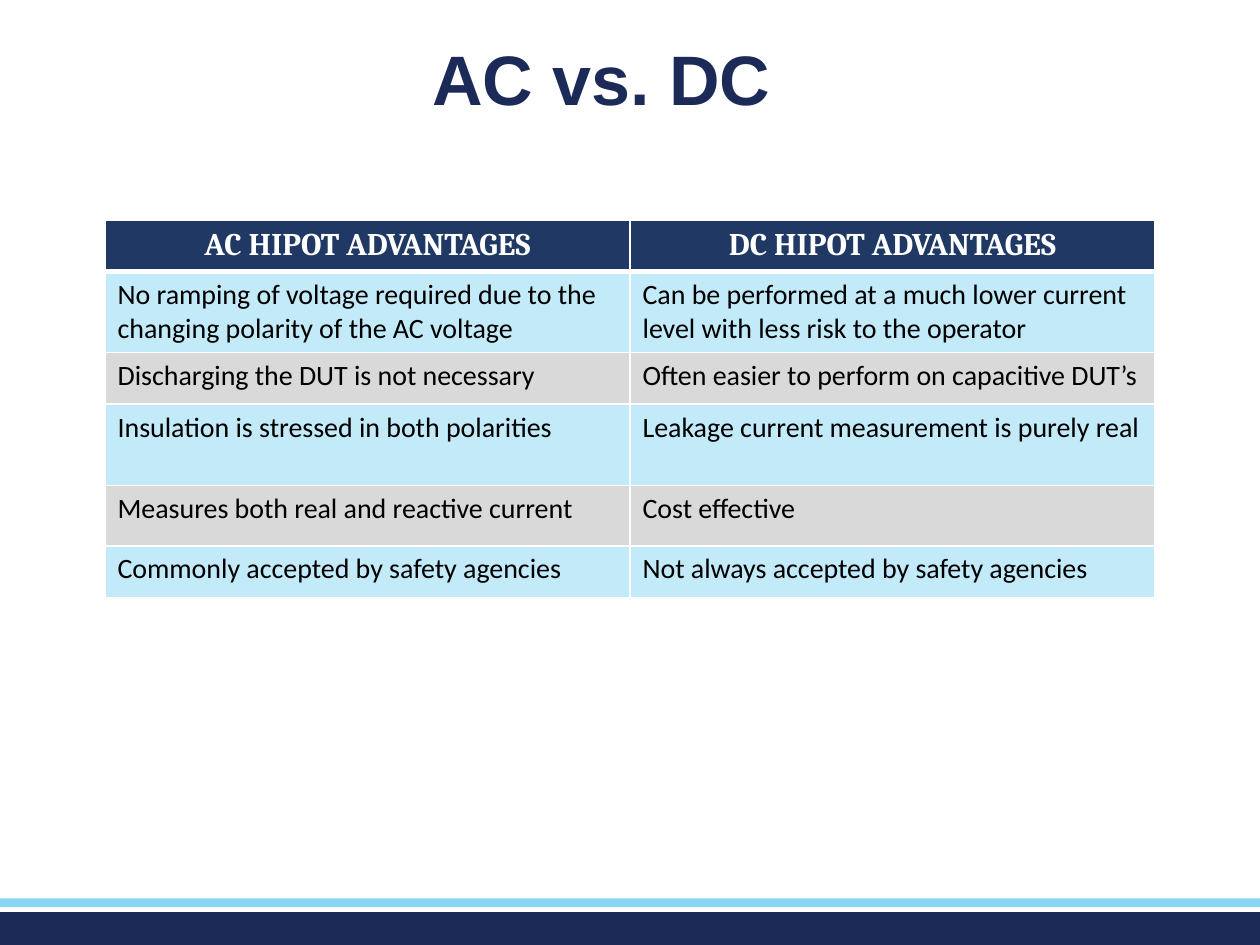
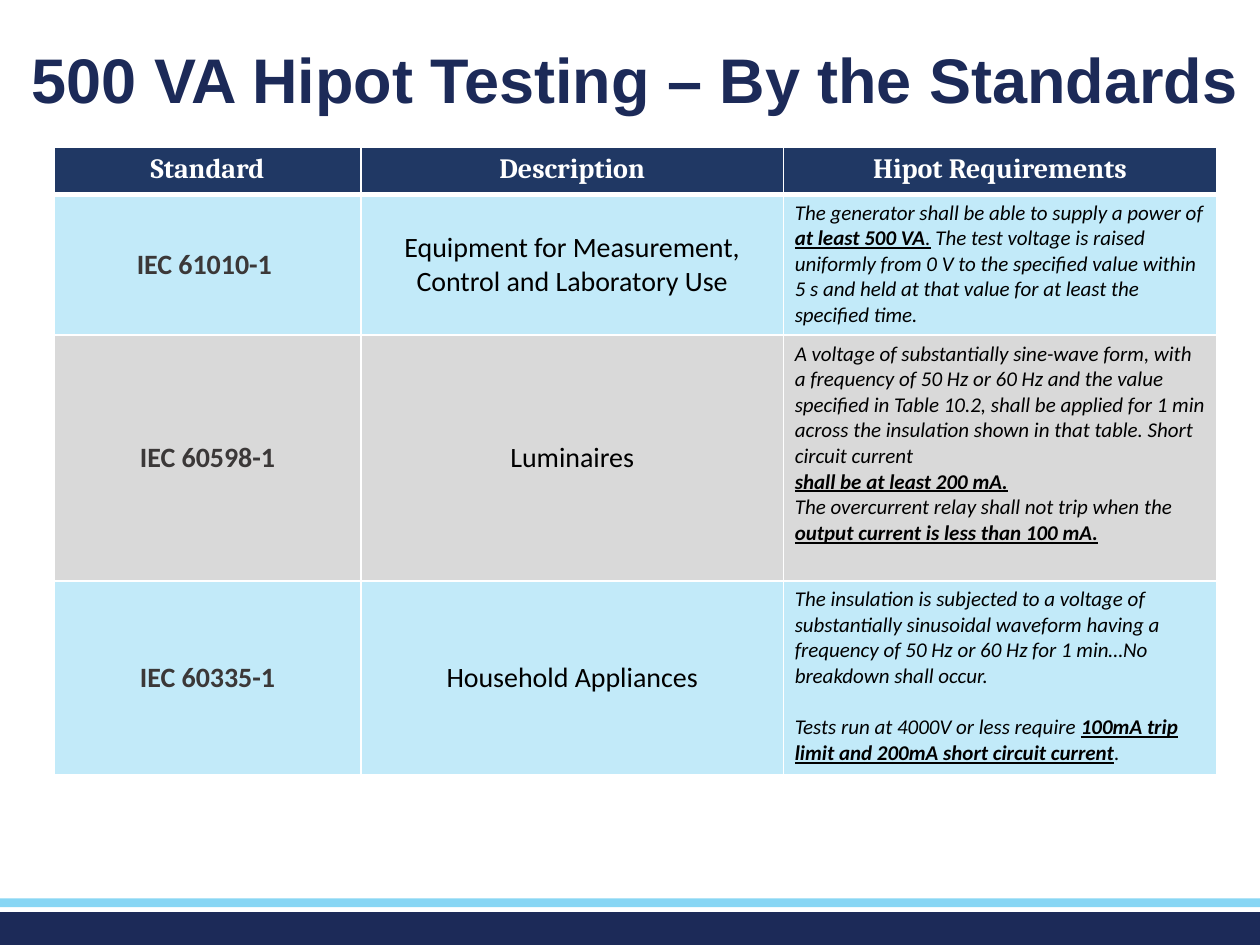
from dataclasses import dataclass
from typing import NamedTuple

from lxml.etree import SubElement
from pptx import Presentation
from pptx.dml.color import RGBColor
from pptx.enum.shapes import MSO_SHAPE as Shape
from pptx.enum.text import MSO_ANCHOR as Anchor, PP_ALIGN as Align
from pptx.oxml.ns import qn
from pptx.util import Pt

COLORS = {
    "navy": "1C2A58", "sky": "88D6F4", "header": "203864", "tint": "87D6F4",
    "gray": "D9D9D9", "white": "FFFFFF", "black": "000000", "charcoal": "3B3838",
}
WIDTH, HEIGHT = 720, 540
THIN, THICK = 1, 3


class Band(NamedTuple):
    top: float
    height: float
    color: str


class Run(NamedTuple):
    text: str
    font: dict = {}


class Para(NamedTuple):
    runs: list[Run]
    space_before: float = 0


class Style(NamedTuple):
    font: dict
    color: str = "black"
    align: Align = Align.LEFT
    anchor: Anchor = Anchor.TOP


@dataclass
class TableSpec:
    left: float
    top: float
    columns: list[float]
    heights: list[float]
    header: Style
    styles: list[Style]
    rows: list[list]
    margins: tuple[float, float] = (7.2, 3.6)


BANDS = [Band(521.3, 18.7, "navy"), Band(513.4, 5, "sky")]
STRONG = {"bold": True, "underline": True}


def rgb(name: str) -> RGBColor:
    return RGBColor.from_string(COLORS[name])


def font_of(name: str, size: float, **extra) -> dict:
    return {"name": name, "size": Pt(size), "bold": False, **extra}


def header_style(size: float) -> Style:
    return Style(font_of("Cambria", size, bold=True), "white", Align.CENTER)


def plain(text: str) -> Para:
    return Para([Run(text)])


def write(frame, paragraphs: list[Para], style: Style, line_spacing: float = 1) -> None:
    for index, item in enumerate(paragraphs):
        paragraph = frame.add_paragraph() if index else frame.paragraphs[0]
        paragraph.alignment = style.align
        paragraph.line_spacing = line_spacing
        paragraph.space_before = Pt(item.space_before)
        for piece in item.runs:
            run = paragraph.add_run()
            run.text = piece.text
            for key, value in {**style.font, **piece.font}.items():
                setattr(run.font, key, value)
            run.font.color.rgb = rgb(style.color)


def add_base(presentation, title: str, left: float, width: float, size: float):
    """Add a slide with the footer bands and a title."""
    slide = presentation.slides.add_slide(presentation.slide_layouts[6])
    for band in BANDS:
        shape = slide.shapes.add_shape(
            Shape.RECTANGLE, 0, Pt(band.top), Pt(WIDTH), Pt(band.height))
        shape.shadow.inherit = False
        shape.fill.solid()
        shape.fill.fore_color.rgb = rgb(band.color)
        shape.line.fill.background()
    box = slide.shapes.add_textbox(Pt(left), Pt(23.8), Pt(width), Pt(47.5))
    box.text_frame.word_wrap = True
    box.text_frame.vertical_anchor = Anchor.MIDDLE
    style = Style(font_of("Arial", size, bold=True), "navy", Align.CENTER)
    write(box.text_frame, [plain(title)], style, 0.9)
    return slide


def set_borders(cell, top: float, bottom: float) -> None:
    properties = cell._tc.get_or_add_tcPr()
    for side, width in {"L": THIN, "R": THIN, "T": top, "B": bottom}.items():
        line = SubElement(properties, qn(f"a:ln{side}"), w=str(Pt(width)))
        fill = SubElement(line, qn("a:solidFill"))
        SubElement(fill, qn("a:srgbClr"), val=COLORS["white"])


def set_fill(cell, color: str) -> None:
    cell.fill.solid()
    cell.fill.fore_color.rgb = rgb(color)
    if color == "tint":  # half transparent
        value = cell._tc.tcPr.find(".//" + qn("a:solidFill") + "[last()]")
        value = cell._tc.tcPr.find(qn("a:solidFill")) if value is None else value
        direct = cell._tc.tcPr.find(qn("a:solidFill"))
        SubElement(direct[0], qn("a:alpha"), val="50000")


def add_table(slide, spec: TableSpec) -> None:
    table = slide.shapes.add_table(
        len(spec.rows), len(spec.columns), Pt(spec.left), Pt(spec.top),
        Pt(sum(spec.columns)), Pt(sum(spec.heights))).table
    for column, width in zip(table.columns, spec.columns):
        column.width = Pt(width)
    across, down = map(Pt, spec.margins)
    margins = {"margin_left": across, "margin_right": across,
               "margin_top": down, "margin_bottom": down}
    for r, (height, contents) in enumerate(zip(spec.heights, spec.rows)):
        table.rows[r].height = Pt(height)
        fill = "header" if r == 0 else "tint" if r % 2 else "gray"
        for c, content in enumerate(contents):
            cell = table.cell(r, c)
            style = spec.styles[c] if r else spec.header
            for key, value in {**margins, "vertical_anchor": style.anchor}.items():
                setattr(cell, key, value)
            set_borders(cell, THICK if r == 1 else THIN, THIN if r else THICK)
            set_fill(cell, fill)
            paragraphs = [plain(content)] if isinstance(content, str) else content
            write(cell.text_frame, paragraphs, style)


# Slide 1: advantages of each test
ADVANTAGES = TableSpec(
    left=60, top=126, columns=[300, 300],
    heights=[29.2, 46.4, 29.4, 46.4, 34.6, 29.4],
    header=header_style(18),
    styles=[Style(font_of("Calibri", 16))] * 2,
    rows=[
        ["AC HIPOT ADVANTAGES", "DC HIPOT ADVANTAGES"],
        ["No ramping of voltage required due to the changing polarity of the AC voltage",
         "Can be performed at a much lower current level with less risk to the operator"],
        ["Discharging the DUT is not necessary",
         "Often easier to perform on capacitive DUT’s"],
        ["Insulation is stressed in both polarities",
         "Leakage current measurement is purely real"],
        ["Measures both real and reactive current", "Cost effective"],
        ["Commonly accepted by safety agencies", "Not always accepted by safety agencies"],
    ])

# Slide 2: requirements of each standard
STANDARDS = TableSpec(
    left=30.8, top=84.2, columns=[175.6, 241.2, 247.7],
    heights=[26.8, 80.6, 140.4, 110.6],
    header=header_style(16),
    styles=[
        Style(font_of("Calibri", 16, bold=True), "charcoal", Align.CENTER, Anchor.MIDDLE),
        Style(font_of("Calibri", 16), "black", Align.CENTER, Anchor.MIDDLE),
        Style(font_of("Calibri", 12, italic=True)),
    ],
    margins=(6.6, 3.4),
    rows=[
        ["Standard", "Description", "Hipot Requirements"],
        ["IEC 61010-1 ", "Equipment for Measurement, Control and Laboratory Use", [
            Para([
                Run("The generator shall be able to supply a power of "),
                Run("at least 500 VA", STRONG),
                Run(".", {"underline": True}),
                Run(" The test voltage is raised uniformly from 0 V to the specified value "
                    "within 5 s and held at that value for at least the specified time."),
            ])]],
        ["IEC 60598-1", "Luminaires", [
            plain("A voltage of substantially sine-wave form, with a frequency of 50 Hz "
                  "or 60 Hz and the value"),
            plain("specified in Table 10.2, shall be applied for 1 min across the "
                  "insulation shown in that table. Short circuit current"),
            Para([Run("shall be at least 200 mA.", STRONG)]),
            Para([Run("The overcurrent relay shall not trip when the "),
                  Run("output current is less than 100 mA.", STRONG)])]],
        ["IEC 60335-1", "Household Appliances", [
            plain("The insulation is subjected to a voltage of substantially sinusoidal "
                  "waveform having a"),
            plain("frequency of 50 Hz or 60 Hz for 1 min…No breakdown shall occur."),
            Para([Run("Tests run at 4000V or less require "),
                  Run("100mA trip limit and 200mA short circuit current", STRONG),
                  Run(".")], space_before=14.6)]],
    ])


def main() -> None:
    presentation = Presentation()
    presentation.slide_width, presentation.slide_height = Pt(WIDTH), Pt(HEIGHT)
    add_table(add_base(presentation, "AC vs. DC ", 25.2, 648, 40), ADVANTAGES)
    add_table(add_base(presentation, "500 VA Hipot Testing – By the Standards",
                       5.8, 714.2, 36), STANDARDS)
    presentation.save("out.pptx")


if __name__ == "__main__":
    main()
